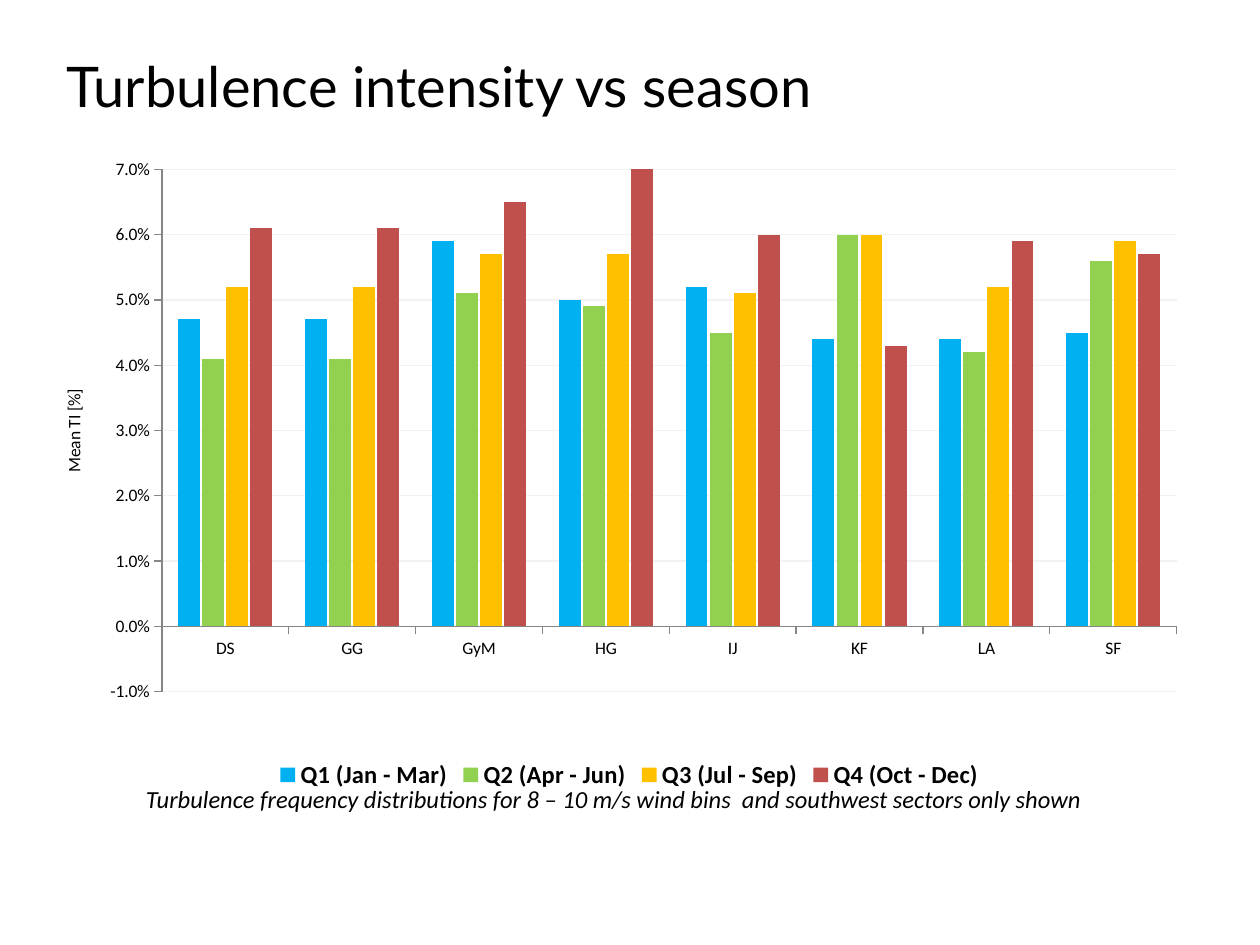
from lxml import etree
from pptx import Presentation
from pptx.chart.data import CategoryChartData
from pptx.dml.color import RGBColor
from pptx.enum.chart import XL_CHART_TYPE, XL_LEGEND_POSITION, XL_TICK_MARK
from pptx.enum.text import MSO_AUTO_SIZE
from pptx.oxml.ns import qn
from pptx.util import Inches, Pt

COLUMNS = XL_CHART_TYPE.COLUMN_CLUSTERED
BOTTOM = XL_LEGEND_POSITION.BOTTOM
OUTSIDE = XL_TICK_MARK.OUTSIDE
GROW = MSO_AUTO_SIZE.SHAPE_TO_FIT_TEXT

BLACK = RGBColor(0x00, 0x00, 0x00)
AXIS_GRAY = RGBColor(0x86, 0x86, 0x86)
GRID_GRAY = RGBColor(0xF2, 0xF2, 0xF2)
BLUE = RGBColor(0x00, 0xB0, 0xF0)
GREEN = RGBColor(0x92, 0xD0, 0x50)
AMBER = RGBColor(0xFF, 0xC0, 0x00)
RED = RGBColor(0xC0, 0x50, 0x4D)

SITES = ["DS", "GG", "GyM", "HG", "IJ", "KF", "LA", "SF"]
QUARTERS = [
    ("Q1 (Jan - Mar)", BLUE, [0.047, 0.047, 0.059, 0.05, 0.052, 0.044, 0.044, 0.045]),
    ("Q2 (Apr - Jun)", GREEN, [0.041, 0.041, 0.051, 0.049, 0.045, 0.06, 0.042, 0.056]),
    ("Q3 (Jul - Sep)", AMBER, [0.052, 0.052, 0.057, 0.057, 0.051, 0.06, 0.052, 0.059]),
    ("Q4 (Oct - Dec)", RED, [0.061, 0.061, 0.065, 0.07, 0.06, 0.043, 0.059, 0.057]),
]


def set_font(font, size, name="Calibri", bold=False, italic=False):
    font.size, font.name = Pt(size), name
    font.bold, font.italic = bold, italic
    font.color.rgb = BLACK


class SlideBuilder:
    """Holds the current slide and adds styled elements to it."""

    def __init__(self, s):
        self.s = s

    def text(self, text, x, y, w, h, **style):
        sp = self.s.shapes.add_textbox(Inches(x), Inches(y), Inches(w), Inches(h))
        tf = sp.text_frame
        tf.word_wrap = True
        tf.auto_size = GROW
        r = tf.paragraphs[0].add_run()
        r.text = text
        set_font(r.font, **style)

    def column_chart(self, categories, series, x, y, w, h, plot_area):
        data = CategoryChartData(number_format="0.0%")
        data.categories = categories
        for name, _, values in series:
            data.add_series(name, values)
        chart = self.s.shapes.add_chart(
            COLUMNS, Inches(x), Inches(y), Inches(w), Inches(h), data).chart
        set_font(chart.font, 10)
        chart.has_title = False
        chart.has_legend = True
        chart.legend.position = BOTTOM
        chart.legend.include_in_layout = False
        set_font(chart.legend.font, 14, bold=True)
        plot = chart.plots[0]
        plot.vary_by_categories = False
        plot.gap_width, plot.overlap = 150, -10
        for column, (_, color, _) in zip(plot.series, series):
            column.invert_if_negative = False
            column.format.fill.solid()
            column.format.fill.fore_color.rgb = color
        self.axes(chart)
        self.place_plot(chart, *plot_area)

    def axes(self, chart):
        for axis in (chart.category_axis, chart.value_axis):
            axis.major_tick_mark = OUTSIDE
            axis.format.line.color.rgb = AXIS_GRAY
            axis.format.line.width = Pt(0.75)
            set_font(axis.tick_labels.font, 10)
        axis = chart.value_axis
        axis.minimum_scale, axis.maximum_scale, axis.major_unit = -0.01, 0.07, 0.01
        axis.tick_labels.number_format = "0.0%"
        axis.tick_labels.number_format_is_linked = False
        axis.major_gridlines.format.line.color.rgb = GRID_GRAY
        axis.major_gridlines.format.line.width = Pt(0.75)
        p = axis.axis_title.text_frame.paragraphs[0]
        r = p.add_run()
        r.text = "Mean TI [%]"
        set_font(r.font, 10)

    def place_plot(self, chart, x, y, w, h):
        area = chart.plots[0]._element.getparent()
        for old in area.findall(qn("c:layout")):
            area.remove(old)
        layout = etree.Element(qn("c:layout"))
        area.insert(0, layout)
        manual = etree.SubElement(layout, qn("c:manualLayout"))
        settings = [("layoutTarget", "inner"), ("xMode", "edge"), ("yMode", "edge"),
                    ("x", x), ("y", y), ("w", w), ("h", h)]
        for tag, value in settings:
            etree.SubElement(manual, qn(f"c:{tag}")).set("val", str(value))


def main():
    prs = Presentation()
    prs.slide_width, prs.slide_height = Inches(10), Inches(7.5)
    slide = SlideBuilder(prs.slides.add_slide(prs.slide_layouts[6]))
    slide.text("Turbulence intensity vs season", 0.43, 0.36, 9.13, 0.64,
               size=32, name="Lato")
    slide.text("Turbulence frequency distributions for 8 – 10 m/s wind bins  and "
               "southwest sectors only shown", 1.06, 6.17, 8.43, 0.34,
               size=14, italic=True)
    slide.column_chart(SITES, QUARTERS, 0.47, 1.19, 9.05, 5.12,
                       plot_area=(0.09, 0.03, 0.89, 0.81))
    prs.save("out.pptx")


if __name__ == "__main__":
    main()
